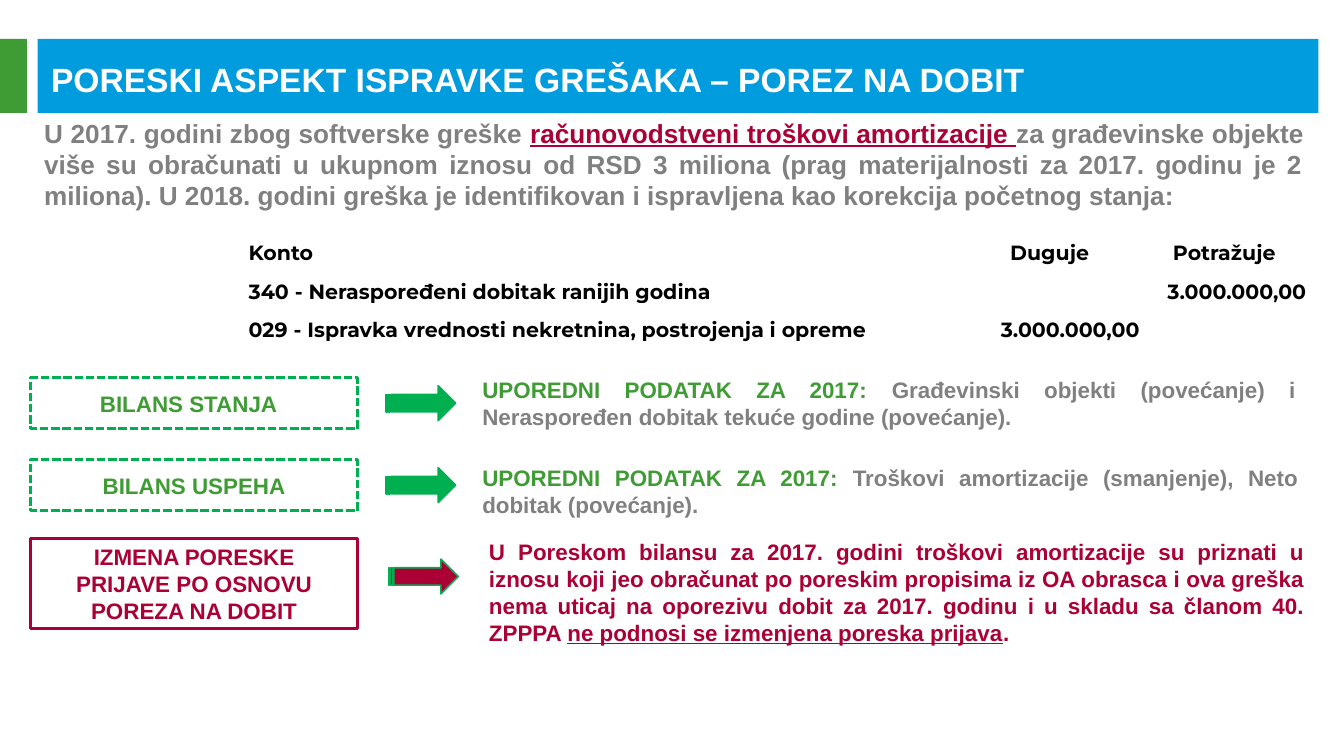
from pptx import Presentation
from pptx.dml.color import RGBColor
from pptx.enum.dml import MSO_LINE
from pptx.enum.shapes import MSO_SHAPE as Shape
from pptx.enum.text import MSO_ANCHOR as Anchor, MSO_AUTO_SIZE as AutoSize, PP_ALIGN as Align
from pptx.util import Inches, Pt

WHITE = RGBColor(0xFF, 0xFF, 0xFF)
BLACK = RGBColor(0, 0, 0)
BLUE = RGBColor(0x00, 0x9C, 0xDE)
GREEN = RGBColor(0x3F, 0x9C, 0x35)
BRIGHT_GREEN = RGBColor(0x00, 0xB0, 0x50)
GRAY = RGBColor(0x80, 0x80, 0x80)
CRIMSON = RGBColor(0xAB, 0x00, 0x35)

COMPARATIVE = "UPOREDNI PODATAK ZA 2017: "
INTRO = [
    ("U 2017. godini zbog softverske greške ", GRAY, False),
    ("računovodstveni troškovi amortizacije ", CRIMSON, True),
    ("za građevinske objekte više su obračunati u ukupnom iznosu od RSD 3 miliona "
     "(prag materijalnosti za 2017. godinu je 2 miliona). U 2018. godini greška je "
     "identifikovan i ispravljena kao korekcija početnog stanja:", GRAY, False),
]
BALANCE_SHEET = [
    (COMPARATIVE, GREEN, False),
    ("Građevinski objekti (povećanje) i Neraspoređen dobitak tekuće godine "
     "(povećanje).", GRAY, False),
]
INCOME_STATEMENT = [
    (COMPARATIVE, GREEN, False),
    ("Troškovi amortizacije (smanjenje), Neto dobitak (povećanje).", GRAY, False),
]
TAX_RETURN = [
    ("U Poreskom bilansu za 2017. godini troškovi amortizacije su priznati u iznosu "
     "koji jeo obračunat po poreskim propisima iz OA obrasca i ova greška nema uticaj "
     "na oporezivu dobit za 2017. godinu i u skladu sa članom 40. ZPPPA ", CRIMSON, False),
    ("ne podnosi se izmenjena poreska prijava", CRIMSON, True),
    (".", CRIMSON, False),
]
ENTRIES = [
    ("Konto", "Duguje", "Potražuje"),
    ("340 - Neraspoređeni dobitak ranijih godina", "", "3.000.000,00"),
    ("029 - Ispravka vrednosti nekretnina, postrojenja i opreme", "3.000.000,00", ""),
]


def set_font(paragraph, size, color=None, name="Arial"):
    font = paragraph.font
    font.name, font.size, font.bold = name, Pt(size), True
    if color is not None:
        font.color.rgb = color


def add_shape(slide, kind, left, top, width, height, fill=None, line=None, weight=1.5):
    shape = slide.shapes.add_shape(
        kind, Inches(left), Inches(top), Inches(width), Inches(height))
    shape.shadow.inherit = False
    if fill is None:
        shape.fill.background()
    else:
        shape.fill.solid()
        shape.fill.fore_color.rgb = fill
    if line is None:
        shape.line.fill.background()
    else:
        shape.line.color.rgb = line
        shape.line.width = Pt(weight)
    return shape


def add_justified_text(slide, left, top, width, height, parts, size):
    box = slide.shapes.add_textbox(
        Inches(left), Inches(top), Inches(width), Inches(height))
    frame = box.text_frame
    frame.word_wrap = True
    frame.vertical_anchor = Anchor.MIDDLE
    paragraph = frame.paragraphs[0]
    paragraph.alignment = Align.JUSTIFY
    set_font(paragraph, size)
    for text, color, underlined in parts:
        run = paragraph.add_run()
        run.text = text
        run.font.color.rgb = color
        if underlined:
            run.font.underline = True


def add_header(slide, top, height):
    add_shape(slide, Shape.RECTANGLE, 0.28, top, 9.53, height, BLUE)
    add_shape(slide, Shape.RECTANGLE, 0, top, 0.2, height, GREEN)
    title = slide.shapes.title
    title.left, title.top = Inches(0.28), Inches(top + 0.01)
    title.width, title.height = Inches(9.65), Inches(height + 0.03)
    frame = title.text_frame
    frame.text = "PORESKI ASPEKT ISPRAVKE GREŠAKA – POREZ NA DOBIT"
    frame.auto_size = AutoSize.NONE
    frame.vertical_anchor = Anchor.MIDDLE
    paragraph = frame.paragraphs[0]
    paragraph.alignment = Align.LEFT
    set_font(paragraph, 18, WHITE)
    slide.shapes._spTree.append(title._element)


def add_entries_table(slide, left, top, height):
    widths, row_height = (5.29, 1.36, 1.24), height / len(ENTRIES)
    table = slide.shapes.add_table(
        len(ENTRIES), len(widths), Inches(left), Inches(top),
        Inches(sum(widths)), Inches(height)).table
    table.first_row = table.horz_banding = False
    for column, width in zip(table.columns, widths):
        column.width = Inches(width)
    for row_index, entry in enumerate(ENTRIES):
        table.rows[row_index].height = Inches(row_height)
        for column_index, text in enumerate(entry):
            cell = table.cell(row_index, column_index)
            cell.fill.background()
            cell.vertical_anchor = Anchor.BOTTOM
            cell.margin_left = cell.margin_right = cell.margin_top = Inches(0.01)
            cell.margin_bottom = 0
            cell.text = text
            paragraph = cell.text_frame.paragraphs[0]
            if column_index:
                paragraph.alignment = Align.RIGHT if row_index else Align.CENTER
            set_font(paragraph, 11, BLACK, "Montserrat")


def add_effect(slide, top, height, label, color, line, dashed,
               arrow_left, arrow_top, arrow_fill, text_box, parts, right_inset=0.1):
    box = add_shape(slide, Shape.RECTANGLE, 0.23, top, 2.43, height, line=line)
    if dashed:
        box.line.dash_style = MSO_LINE.SQUARE_DOT
    frame = box.text_frame
    frame.word_wrap = True
    frame.margin_right = Inches(right_inset)
    frame.vertical_anchor = Anchor.MIDDLE
    frame.text = label
    paragraph = frame.paragraphs[0]
    paragraph.alignment = Align.CENTER
    set_font(paragraph, 12, color)
    add_shape(slide, Shape.STRIPED_RIGHT_ARROW, arrow_left, top + arrow_top, 0.52, 0.26,
              arrow_fill, BRIGHT_GREEN, 0.85)
    add_justified_text(slide, *text_box, parts, 12)


def main():
    presentation = Presentation()
    presentation.slide_width = Inches(10)
    presentation.slide_height = presentation.slide_width * 9 // 16
    slide = presentation.slides.add_slide(presentation.slide_layouts[5])
    add_header(slide, 0.29, 0.55)
    add_justified_text(slide, 0.23, 0.93, 9.57, 0.58, INTRO, 14)
    add_entries_table(slide, 1.84, 1.69, 0.86)
    add_effect(slide, 2.81, 0.38, "BILANS STANJA", GREEN, BRIGHT_GREEN, True,
               2.87, 0.06, BRIGHT_GREEN, (3.49, 2.7, 6.25, 0.6), BALANCE_SHEET,
               right_inset=0.18)
    add_effect(slide, 3.42, 0.38, "BILANS USPEHA", GREEN, BRIGHT_GREEN, True,
               2.87, 0.06, BRIGHT_GREEN, (3.49, 3.35, 6.27, 0.61), INCOME_STATEMENT)
    add_effect(slide, 4.01, 0.67, "IZMENA PORESKE PRIJAVE PO OSNOVU POREZA NA DOBIT",
               CRIMSON, CRIMSON, False,
               2.89, 0.15, CRIMSON, (3.54, 3.96, 6.27, 0.89), TAX_RETURN)
    presentation.save("out.pptx")


if __name__ == "__main__":
    main()
